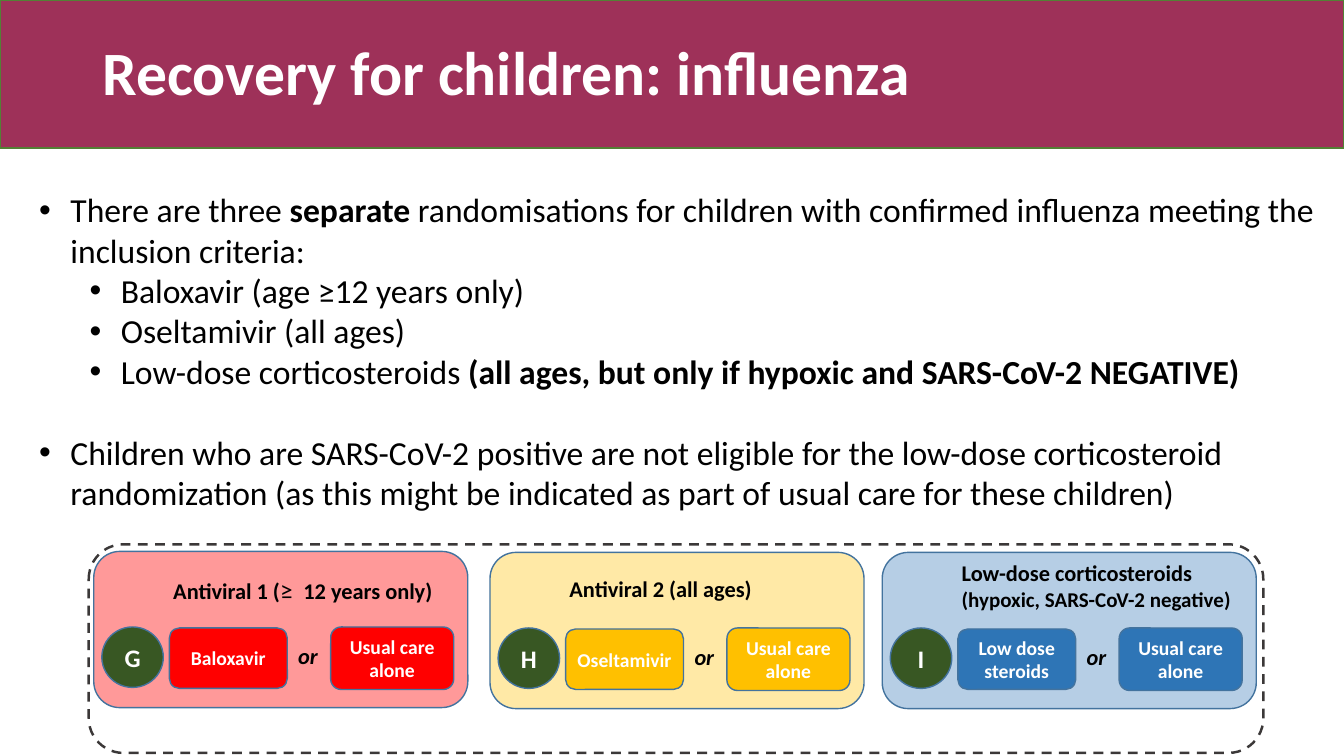
"""Slide on the three influenza randomisations for children."""
import pptx
import pptx.dml.color
import pptx.enum.dml
import pptx.enum.shapes
import pptx.enum.text
import pptx.oxml
import pptx.oxml.ns
import pptx.util

PX = 9144
SHAPE = pptx.enum.shapes.MSO_SHAPE
ALIGN = pptx.enum.text.PP_ALIGN
MIDDLE = pptx.enum.text.MSO_ANCHOR.MIDDLE
rgb = pptx.dml.color.RGBColor.from_string


def add_box(shapes, kind, at, fill, line, width=1):
    sp = shapes.add_shape(kind, *[v * PX for v in at])
    sp.shadow.inherit = False
    if fill:
        sp.fill.solid()
        sp.fill.fore_color.rgb = rgb(fill)
    else:
        sp.fill.background()
    sp.line.color.rgb = rgb(line)
    sp.line.width = pptx.util.Pt(width)
    return sp


def write(sp, lines, color, align=ALIGN.LEFT):
    tf = sp.text_frame
    tf.word_wrap = True
    for i, runs in enumerate(lines):
        p = tf.add_paragraph() if i else tf.paragraphs[0]
        p.alignment = align
        for text, size, bold, italic in runs:
            r = p.add_run()
            r.text = text
            r.font.name = "Calibri"
            r.font.size = pptx.util.Pt(size)
            r.font.bold = bold
            r.font.italic = italic
            r.font.color.rgb = rgb(color)
    return tf


prs = pptx.Presentation()
prs.slide_width = 1333 * PX
prs.slide_height = 750 * PX
s = prs.slides.add_slide(prs.slide_layouts[6])

add_box(s.shapes, SHAPE.RECTANGLE, (0, 0, 1333, 147), "9E3159", "538035")
title = s.shapes.add_textbox(92 * PX, 2 * PX, 885 * PX, 145 * PX)
tf = write(title, [[("Recovery for children: influenza", 44, True, False)]], "FFFFFF")
tf.vertical_anchor = MIDDLE
tf.paragraphs[0].line_spacing = 0.9

bullets = [
    (0, [("There are three ", False), ("separate ", True),
         ("randomisations for children with confirmed influenza meeting the inclusion criteria:", False)]),
    (1, [("Baloxavir (age ≥12 years only)", False)]),
    (1, [("Oseltamivir (all ages)", False)]),
    (1, [("Low-dose corticosteroids", False),
         (" (all ages, but only if hypoxic and SARS-CoV-2 NEGATIVE)", True)]),
    (0, [("Children who are SARS-CoV-2 positive are not eligible for the low-dose corticosteroid "
          "randomization (as this might be indicated as part of usual care for these children)", False)]),
]
body = s.shapes.add_textbox(29 * PX, 183 * PX, 1315 * PX, 374 * PX)
tf = write(body, [[(text, 24, bold, False) for text, bold in runs] for _, runs in bullets], "000000")
for p, (level, _) in zip(tf.paragraphs, bullets):
    p.level = level
    pPr = p._p.get_or_add_pPr()
    pPr.set("marL", str((31 + 50 * level) * PX))
    pPr.set("indent", str(-31 * PX))
    ns = pptx.oxml.ns.nsdecls("a")
    pPr.append(pptx.oxml.parse_xml(f'<a:buFont {ns} typeface="Arial"/>'))
    pPr.append(pptx.oxml.parse_xml(f'<a:buChar {ns} char="•"/>'))
tf.paragraphs[-1].space_before = pptx.util.Pt(29)

arms = [
    ("I", 875, 548, "2E75B6", 35, ["Low dose", "steroids"], 2,
     [[("Low-dose corticosteroids", 16, True, False)],
      [("(hypoxic, SARS-CoV-2 negative)", 15, True, False)]]),
    ("G", 93, 547, "FF0000", 40, ["Baloxavir"], 18,
     [[("Antiviral 1 (", 16, True, False), ("≥ ", 18, False, False),
       (" 12 years only)", 16, True, False)]]),
    ("H", 486, 548, "FFC000", 35, ["Oseltamivir"], 18,
     [[("Antiviral 2 (all ages)", 16, True, False)]]),
]
for letter, x, y, color, opacity, drug, heading_dy, heading in arms:
    shapes = s.shapes.add_group_shape().shapes
    panel = add_box(shapes, SHAPE.ROUNDED_RECTANGLE, (x, y, 371, 155), color, "43739E")
    clr = panel.fill._xPr.find(".//" + pptx.oxml.ns.qn("a:srgbClr"))
    clr.append(pptx.oxml.parse_xml(
        f'<a:alpha {pptx.oxml.ns.nsdecls("a")} val="{opacity * 1000}"/>'))

    for kind, dx, dy, w, h, fill, lines, size in [
        (SHAPE.ROUNDED_RECTANGLE, 75, 76, 117, 60, color, drug, 14),
        (SHAPE.ROUNDED_RECTANGLE, 235, 75, 122, 62, color, ["Usual care alone"], 14),
        (SHAPE.OVAL, 8, 75, 61, 60, "385723", [letter], 18),
    ]:
        sp = add_box(shapes, kind, (x + dx, y + dy, w, h), fill, "43739E")
        tf = write(sp, [[(text, size, True, False)] for text in lines], "FFFFFF", ALIGN.CENTER)
        tf.vertical_anchor = MIDDLE
        tf.margin_left = tf.margin_right = 8 * PX

    for dx, dy, w, h, lines in [
        (193, 85, 46, 37, [[("or", 16, True, True)]]),
        (69, heading_dy, 290, 31 * len(heading), heading),
    ]:
        write(shapes.add_textbox((x + dx) * PX, (y + dy) * PX, w * PX, h * PX), lines, "000000")

frame = add_box(s.shapes, SHAPE.ROUNDED_RECTANGLE, (88, 540, 1165, 207), None, "3B3838", 1.75)
frame.line.dash_style = pptx.enum.dml.MSO_LINE.DASH

prs.save("out.pptx")
